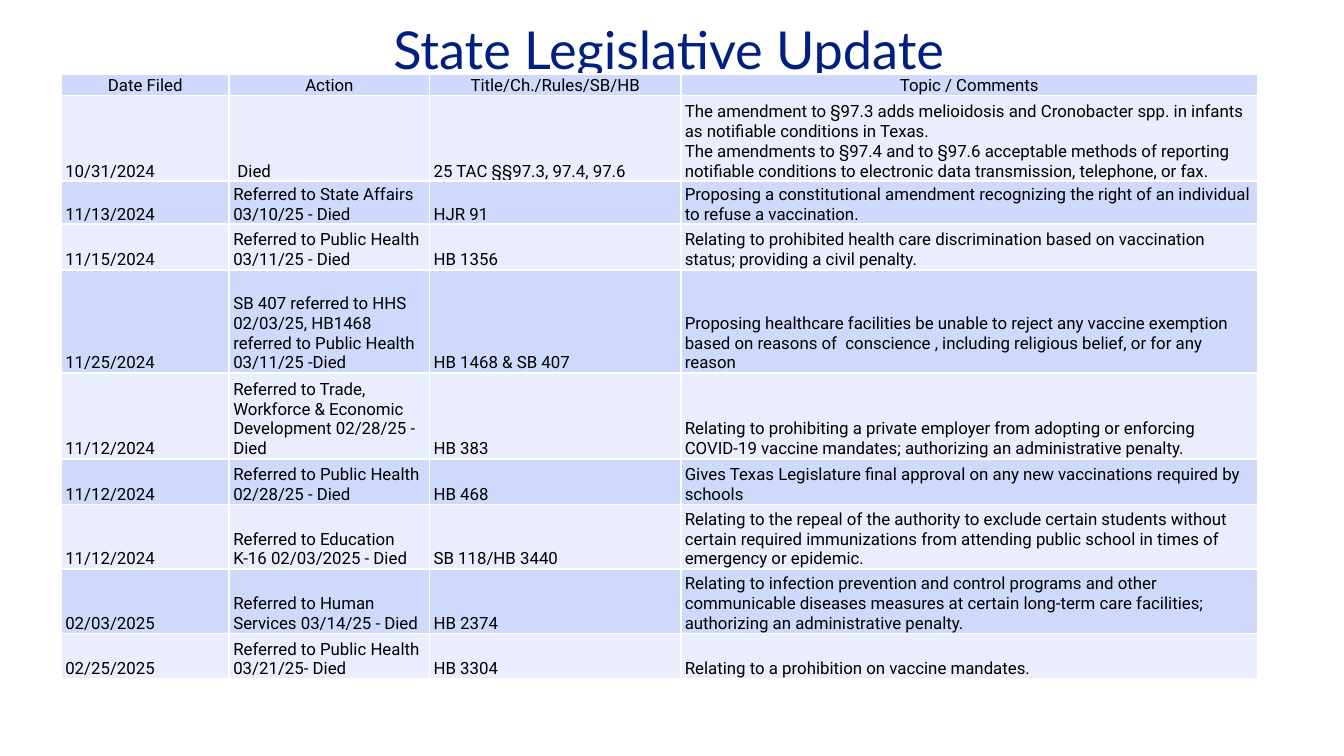
"""Build the State Legislative Update slide with its table of filed bills."""
from lxml import etree
from pptx import Presentation
from pptx.dml.color import RGBColor
from pptx.enum.text import MSO_ANCHOR, PP_ALIGN
from pptx.oxml.ns import qn
from pptx.util import Pt

CENTER, LEFT = PP_ALIGN.CENTER, PP_ALIGN.LEFT
BOTTOM, MIDDLE = MSO_ANCHOR.BOTTOM, MSO_ANCHOR.MIDDLE

TITLE = "State Legislative Update"
HEADERS = ("Date Filed", "Action", "Title/Ch./Rules/SB/HB", "Topic / Comments")
BILLS = [
    ("10/31/2024", " Died", "25 TAC §§97.3, 97.4, 97.6",
     "The amendment to §97.3 adds melioidosis and Cronobacter spp. in infants "
     "as notifiable conditions in Texas.\n"
     "The amendments to §97.4 and to §97.6 acceptable methods of reporting "
     "notifiable conditions to electronic data transmission, telephone, or fax."),
    ("11/13/2024", "Referred to State Affairs 03/10/25 - Died", "HJR 91",
     "Proposing a constitutional amendment recognizing the right of an individual "
     "to refuse a vaccination."),
    ("11/15/2024", "Referred to Public Health 03/11/25 - Died", "HB 1356",
     "Relating to prohibited health care discrimination based on vaccination "
     "status; providing a civil penalty."),
    ("11/25/2024",
     "SB 407 referred to HHS 02/03/25, HB1468 referred to Public Health 03/11/25 -Died",
     "HB 1468 & SB 407",
     "Proposing healthcare facilities be unable to reject any vaccine exemption "
     "based on reasons of  conscience , including religious belief, or for any reason"),
    ("11/12/2024",
     "Referred to Trade, Workforce & Economic Development 02/28/25 - Died", "HB 383",
     "Relating to prohibiting a private employer from adopting or enforcing "
     "COVID-19 vaccine mandates; authorizing an administrative penalty."),
    ("11/12/2024", "Referred to Public Health 02/28/25 - Died", "HB 468",
     "Gives Texas Legislature final approval on any new vaccinations required by schools"),
    ("11/12/2024", "Referred to Education K-16 02/03/2025 - Died", "SB 118/HB 3440",
     "Relating to the repeal of the authority to exclude certain students without "
     "certain required immunizations from attending public school in times of "
     "emergency or epidemic."),
    ("02/03/2025", "Referred to Human Services 03/14/25 - Died", "HB 2374",
     "Relating to infection prevention and control programs and other "
     "communicable diseases measures at certain long-term care facilities; "
     "authorizing an administrative penalty."),
    ("02/25/2025", "Referred to Public Health 03/21/25- Died", "HB 3304",
     "Relating to a prohibition on vaccine mandates."),
]
COLUMN_WIDTHS = (90, 107.3, 134.6, 309)
ROW_HEIGHTS = (11.5, 46, 23, 24.5, 55.3, 46, 24.5, 34.5, 34.5, 24.5)
BAND_FILLS = ("CFD9FB", "E9EDFD")


def color(value):
    return RGBColor.from_string(value)


def write_text(frame, text, font="Roboto", size=9, ink="000000", align=LEFT):
    frame.word_wrap = True
    frame.text = text
    for paragraph in frame.paragraphs:
        paragraph.alignment = align
        for run in paragraph.runs:
            run.font.name = font
            run.font.size = Pt(size)
            run.font.color.rgb = color(ink)


def add_borders(cell, ink="FFFFFF", width=1):
    properties = cell._tc.get_or_add_tcPr()
    for position, side in enumerate(("a:lnL", "a:lnR", "a:lnT", "a:lnB")):
        line = etree.Element(qn(side), w=str(Pt(width)))
        fill = etree.SubElement(line, qn("a:solidFill"))
        etree.SubElement(fill, qn("a:srgbClr"), val=ink)
        properties.insert(position, line)


def add_title(slide):
    box = slide.shapes.add_textbox(Pt(-3.6), Pt(5.8), Pt(723.6), Pt(41))
    box.text_frame.vertical_anchor = MIDDLE
    write_text(box.text_frame, TITLE, font="Lato", size=28, ink="001F82", align=CENTER)


def add_bill_table(slide):
    rows = [HEADERS, *BILLS]
    table = slide.shapes.add_table(
        len(rows), len(HEADERS), Pt(32.8), Pt(39.6),
        Pt(sum(COLUMN_WIDTHS)), Pt(sum(ROW_HEIGHTS))).table
    for column, width in zip(table.columns, COLUMN_WIDTHS):
        column.width = Pt(width)
    for row_index, (row, height) in enumerate(zip(rows, ROW_HEIGHTS)):
        table.rows[row_index].height = Pt(height)
        for column_index, text in enumerate(row):
            cell = table.cell(row_index, column_index)
            cell.margin_left = cell.margin_right = Pt(2.2)
            cell.margin_top = cell.margin_bottom = Pt(0)
            cell.vertical_anchor = BOTTOM
            cell.fill.solid()
            cell.fill.fore_color.rgb = color(BAND_FILLS[row_index % 2])
            add_borders(cell)
            write_text(cell.text_frame, text, align=LEFT if row_index else CENTER)


def main():
    presentation = Presentation()
    presentation.slide_width, presentation.slide_height = Pt(720), Pt(405)
    slide = presentation.slides.add_slide(presentation.slide_layouts[6])
    add_title(slide)
    add_bill_table(slide)
    presentation.save("out.pptx")


if __name__ == "__main__":
    main()
